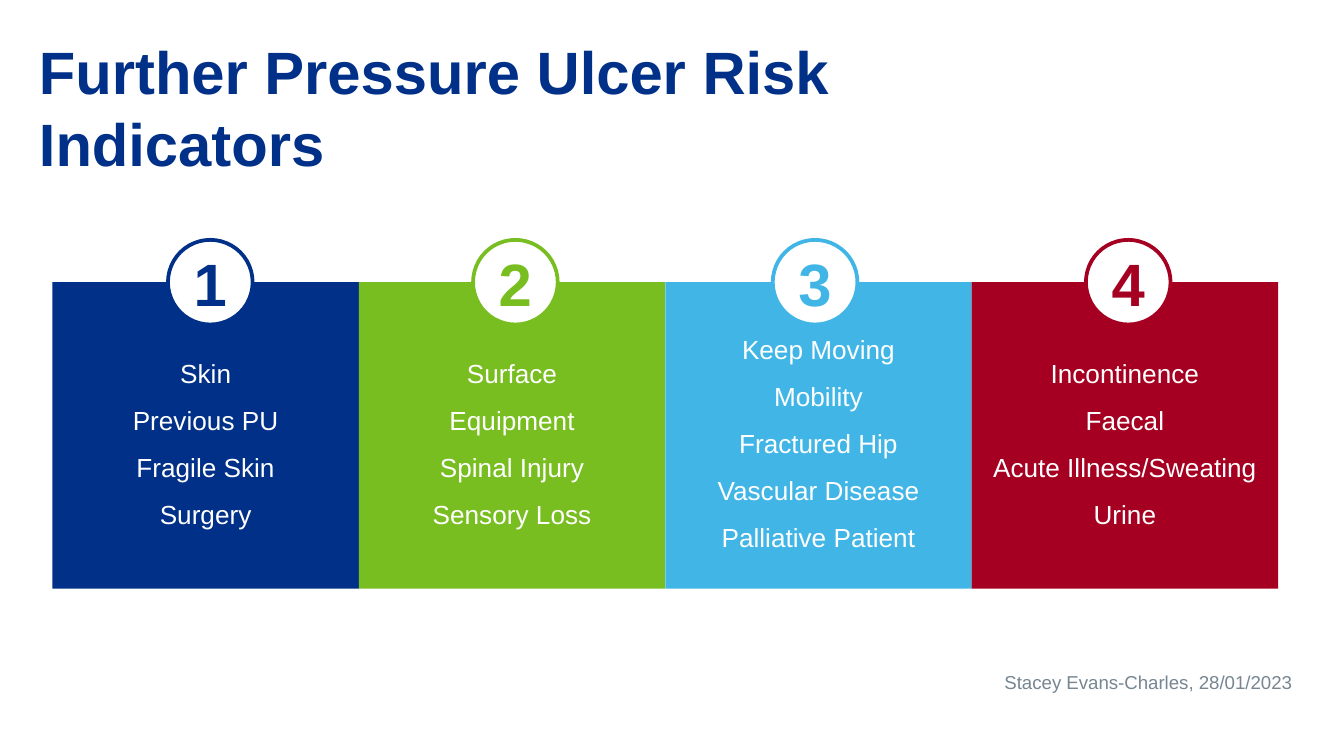
from pptx import Presentation
from pptx.dml.color import RGBColor
from pptx.enum.shapes import MSO_SHAPE as Shape
from pptx.enum.text import MSO_ANCHOR as Anchor, MSO_AUTO_SIZE as Auto, PP_ALIGN as Align
from pptx.util import Inches, Pt

NAVY, WHITE, GREY = "003087", "FFFFFF", "768692"
WIDE = 10
HIGH = WIDE * 9 / 16
LEFT, TOP, SIDE, DISC = 0.39, 2.1, 2.28, 0.63

CARDS = [
    (NAVY, 1.25, ["Skin", "Previous PU", "Fragile Skin", "Surgery"]),
    ("78BE20", 3.52, ["Surface", "Equipment", "Spinal Injury", "Sensory Loss"]),
    ("41B6E6", 5.75, ["Keep Moving", "Mobility", "Fractured Hip",
                      "Vascular Disease", "Palliative Patient"]),
    ("A50021", 8.08, ["Incontinence", "Faecal", "Acute Illness/Sweating", "Urine"]),
]


def paint(target, color):
    if hasattr(target, "solid"):
        target.solid()
        target = target.fore_color
    target.rgb = RGBColor.from_string(color)


def write(shape, lines, size, color, align, anchor, bold=False, space=1.0, inset=None):
    frame = shape.text_frame
    frame.text = "\n".join(lines)
    frame.word_wrap = True
    frame.auto_size = Auto.NONE
    frame.vertical_anchor = anchor
    if inset is not None:
        for edge in ("left", "right", "top", "bottom"):
            setattr(frame, f"margin_{edge}", Inches(inset))
    for para in frame.paragraphs:
        para.alignment = align
        para.line_spacing = space
        for key, value in {"name": "Arial", "size": Pt(size), "bold": bold}.items():
            setattr(para.font, key, value)
        paint(para.font.color, color)


deck = Presentation()
deck.slide_width, deck.slide_height = Inches(WIDE), Inches(HIGH)
slide = deck.slides.add_slide(deck.slide_layouts[5])

title = slide.shapes.title
place = {"left": 0.19, "top": 0.21, "width": 7.24, "height": 1.18}
for key, value in place.items():
    setattr(title, key, Inches(value))
write(title, ["Further Pressure Ulcer Risk Indicators"], 32, NAVY,
      Align.LEFT, Anchor.TOP, bold=True)

credit = slide.shapes.add_textbox(Inches(7.37), Inches(4.94), Inches(2.34), Inches(0.27))
write(credit, ["Stacey Evans-Charles, 28/01/2023"], 10, GREY, Align.RIGHT, Anchor.TOP)

for col, (color, _, lines) in enumerate(CARDS):
    card = slide.shapes.add_shape(Shape.RECTANGLE, Inches(LEFT + col * SIDE),
                                  Inches(TOP), Inches(SIDE), Inches(SIDE))
    card.shadow.inherit = False
    paint(card.fill, color)
    card.line.fill.background()
    write(card, lines, 14, WHITE, Align.CENTER, Anchor.MIDDLE, space=1.5, inset=0.04)

for num, (color, left, _) in enumerate(CARDS, 1):
    disc = slide.shapes.add_shape(Shape.OVAL, Inches(left), Inches(TOP - DISC / 2),
                                  Inches(DISC), Inches(DISC))
    disc.shadow.inherit = False
    paint(disc.fill, WHITE)
    paint(disc.line.fill, color)
    disc.line.width = Pt(2)
    write(disc, [str(num)], 32, color, Align.CENTER, Anchor.MIDDLE, bold=True)

deck.save("out.pptx")
